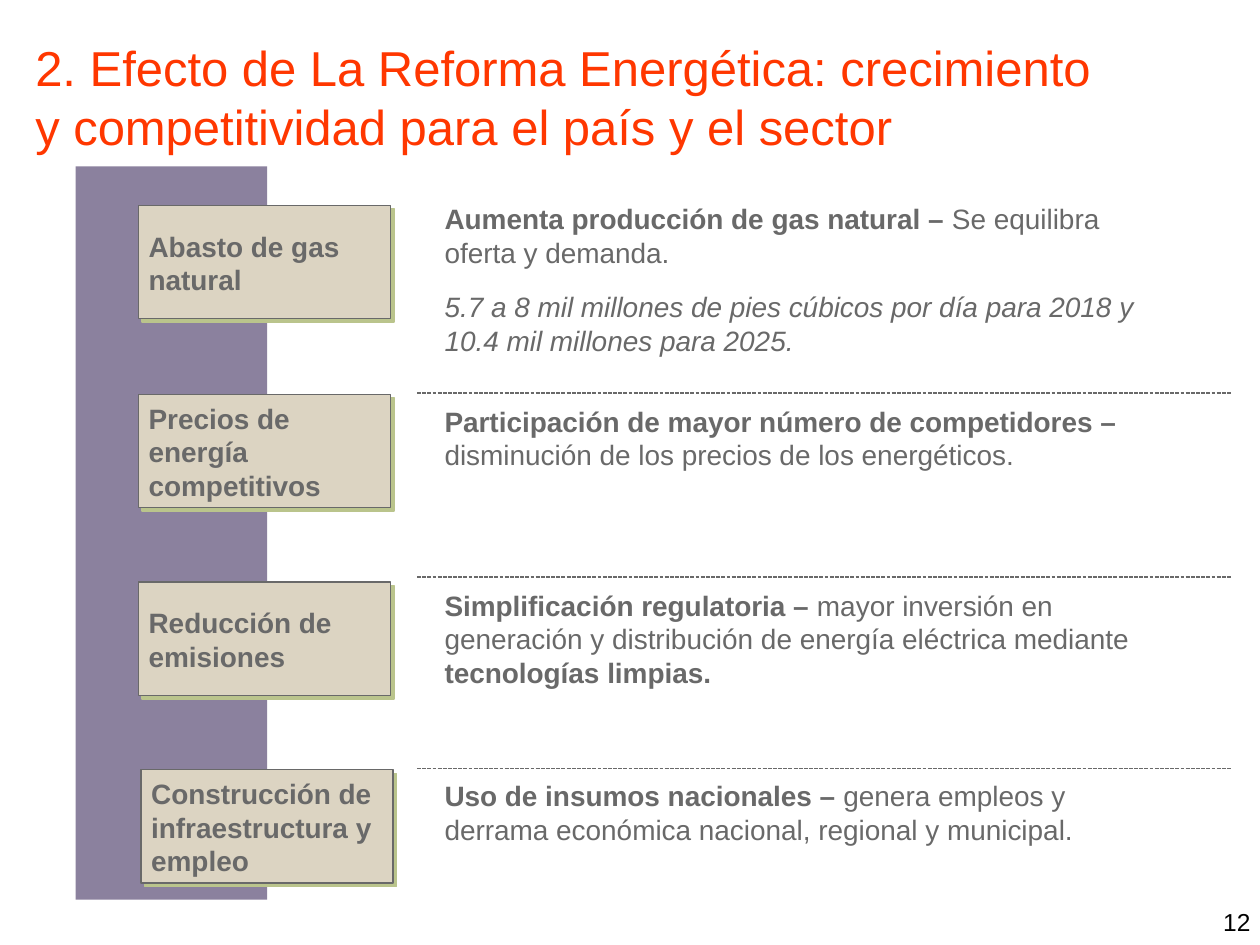
from lxml import etree
from pptx import Presentation
from pptx.dml.color import RGBColor
from pptx.enum.dml import MSO_LINE_DASH_STYLE as Dash
from pptx.enum.shapes import MSO_CONNECTOR as Connector, MSO_SHAPE as Shape
from pptx.enum.text import MSO_ANCHOR as Anchor, MSO_AUTO_SIZE as AutoSize, PP_ALIGN as Align
from pptx.oxml.ns import qn
from pptx.util import Inches, Pt

FONT = "Arial"
GRAY = "696969"
ORANGE = "FF3700"
PURPLE = "8B819E"
BEIGE = "DCD4C2"
GREEN = "BAC48C"
BLACK = "000000"

TITLE = "2. Efecto de La Reforma Energética: crecimiento \vy competitividad para el país y el sector"
TOPICS = [
    ("Abasto de gas natural", (1.1, 1.63), (1.55, 1.35), [
        [("Aumenta producción de gas natural – ", True), ("Se equilibra oferta y demanda.", False)],
        [("5.7 a 8 mil millones de pies cúbicos por día para 2018 y 10.4 mil millones para 2025.", False)],
    ]),
    ("Precios de energía competitivos", (1.1, 3.13), (3.16, 0.64), [
        [("Participación de mayor número de competidores – ", True),
         ("disminución de los precios de los energéticos.", False)],
    ]),
    ("Reducción de emisiones", (1.1, 4.62), (4.62, 0.91), [
        [("Simplificación regulatoria –", True),
         (" mayor inversión en generación y distribución de energía eléctrica mediante ", False),
         ("tecnologías limpias.", True)],
    ]),
    ("Construcción de infraestructura y empleo", (1.12, 6.11), (6.13, 0.64), [
        [("Uso de insumos nacionales – ", True),
         ("genera empleos y derrama económica nacional, regional y municipal.", False)],
    ]),
]
DIVIDERS = [3.12, 4.58, 6.1]


def rgb(value):
    return RGBColor.from_string(value)


def set_font(font, size, color, bold=None):
    font.name = FONT
    font.size = Pt(size)
    font.color.rgb = rgb(color)
    font.bold = bold


def clear_insets(frame):
    frame.margin_left = frame.margin_top = frame.margin_right = frame.margin_bottom = 0


def add_title(slide, left, top, width, height):
    title = slide.shapes.title
    title.left, title.top = Inches(left), Inches(top)
    title.width, title.height = Inches(width), Inches(height)
    frame = title.text_frame
    frame.text = TITLE
    frame.auto_size = AutoSize.NONE
    frame.vertical_anchor = Anchor.BOTTOM
    clear_insets(frame)
    heading = frame.paragraphs[0]
    heading.alignment = Align.LEFT
    set_font(heading.font, 28, ORANGE)


def add_panel(shapes, left, top, width, height, color):
    panel = shapes.add_shape(Shape.RECTANGLE, Inches(left), Inches(top), Inches(width), Inches(height))
    panel.shadow.inherit = False
    panel.fill.solid()
    panel.fill.fore_color.rgb = rgb(color)
    panel.line.fill.background()
    return panel


def add_topic(slide, name, left, top, width, height):
    group = slide.shapes.add_group_shape()
    card = add_panel(group.shapes, left, top, width, height, BEIGE)
    card.line.color.rgb = rgb(GRAY)
    card.line.width = Pt(0.75)
    effects = card._element.spPr.find(qn("a:effectLst"))
    shadow = etree.SubElement(effects, qn("a:outerShdw"), dist=str(Pt(2.8)), dir="2700000",
                              algn="ctr", rotWithShape="0")
    etree.SubElement(shadow, qn("a:srgbClr"), val=GREEN)

    label = group.shapes.add_textbox(Inches(left + 0.08), Inches(top + 0.04),
                                     Inches(width - 0.17), Inches(height - 0.07))
    frame = label.text_frame
    frame.word_wrap = True
    frame.vertical_anchor = Anchor.MIDDLE
    clear_insets(frame)
    frame.text = name
    set_font(frame.paragraphs[0].font, 16, GRAY, True)


def add_effect(slide, paragraphs, left, top, width, height):
    effect = slide.shapes.add_textbox(Inches(left), Inches(top), Inches(width), Inches(height))
    frame = effect.text_frame
    frame.word_wrap = True
    frame.auto_size = AutoSize.SHAPE_TO_FIT_TEXT
    for index, parts in enumerate(paragraphs):
        paragraph = frame.add_paragraph() if index else frame.paragraphs[0]
        set_font(paragraph.font, 16, GRAY)
        if index:
            paragraph.space_before = Pt(12)
            paragraph.font.italic = True
        for words, bold in parts:
            run = paragraph.add_run()
            run.text = words
            run.font.bold = bold


def add_divider(slide, left, right, y):
    divider = slide.shapes.add_connector(Connector.STRAIGHT, Inches(left), Inches(y), Inches(right), Inches(y))
    divider.line.color.rgb = rgb(GRAY)
    divider.line.width = Pt(0.75)
    divider.line.dash_style = Dash.SQUARE_DOT
    etree.SubElement(divider._element.spPr, qn("a:effectLst"))


def add_page_number(slide, left, top, width, height):
    page_number = slide.shapes.add_textbox(Inches(left), Inches(top), Inches(width), Inches(height))
    frame = page_number.text_frame
    frame.word_wrap = True
    frame.text = "12"
    set_font(frame.paragraphs[0].font, 14, BLACK)


def main():
    prs = Presentation()
    prs.slide_width, prs.slide_height = Inches(10), Inches(7.5)
    slide = prs.slides.add_slide(prs.slide_layouts[5])
    add_title(slide, 0.28, 0.36, 9.01, 0.87)
    add_panel(slide.shapes, 0.6, 1.32, 1.52, 5.82, PURPLE)
    for name, (left, top), _, _ in TOPICS:
        add_topic(slide, name, left, top, 2, 0.9)
    for _, _, (top, height), paragraphs in TOPICS:
        add_effect(slide, paragraphs, 3.43, top, 5.8, height)
    for y in DIVIDERS:
        add_divider(slide, 3.31, 9.77, y)
    add_page_number(slide, 9.61, 7.15, 0.54, 0.35)
    prs.save("out.pptx")


if __name__ == "__main__":
    main()
